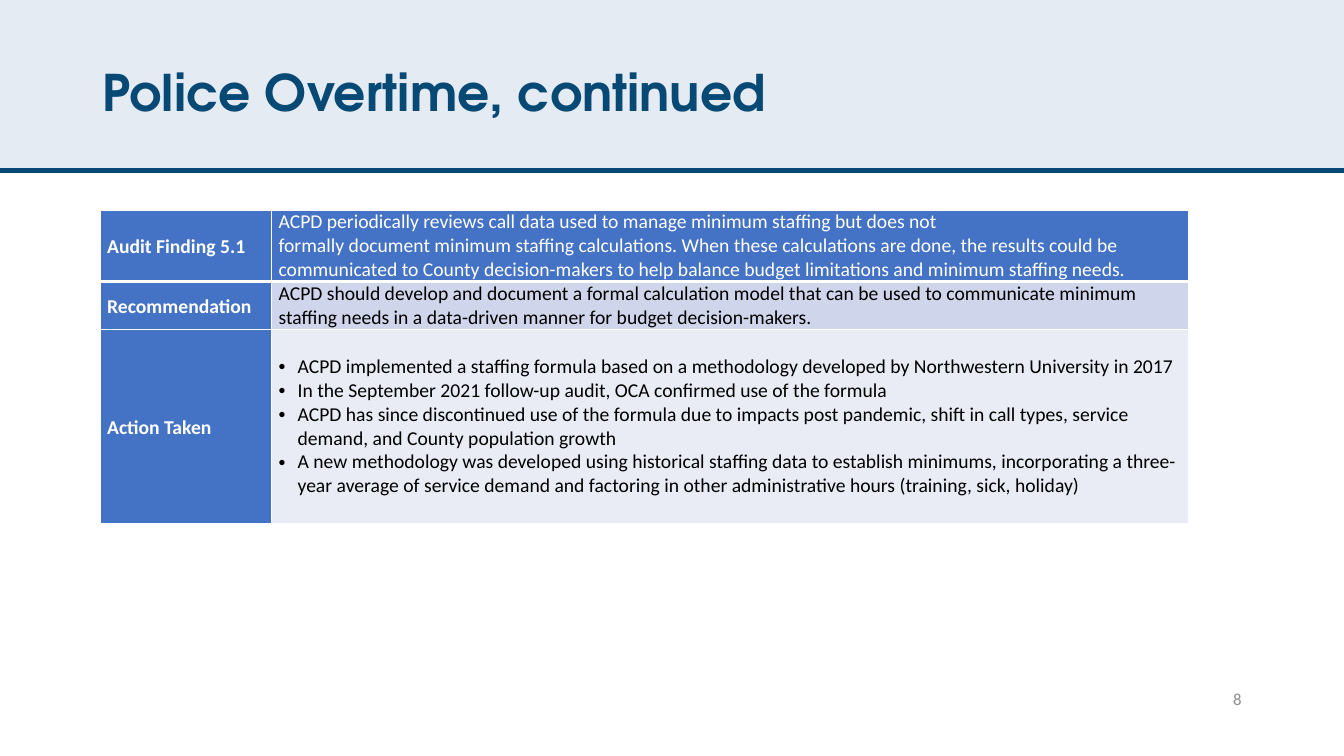
from lxml import etree
from pptx import Presentation
from pptx.dml.color import RGBColor
from pptx.enum.shapes import MSO_CONNECTOR as Connector, MSO_SHAPE as Shape
from pptx.enum.text import MSO_ANCHOR as Anchor, PP_ALIGN as Align
from pptx.oxml.ns import qn
from pptx.util import Cm, Pt

NAVY = RGBColor(0x07, 0x49, 0x75)
PALE = RGBColor(0xE5, 0xEB, 0xF2)
BLUE = RGBColor(0x44, 0x72, 0xC4)
BAND_DARK = RGBColor(0xCF, 0xD5, 0xEA)
BAND_LIGHT = RGBColor(0xE9, 0xEB, 0xF5)
GRAY = RGBColor(0x8C, 0x8C, 0x8C)
WHITE = RGBColor(0xFF, 0xFF, 0xFF)
BLACK = RGBColor(0, 0, 0)

SLIDE_WIDTH, SLIDE_HEIGHT = Cm(33.87), Cm(19.05)

FINDINGS = [
    ("Audit Finding 5.1", [
        "ACPD periodically reviews call data used to manage minimum staffing but does not",
        "formally document minimum staffing calculations. When these calculations are done, "
        "the results could be communicated to County decision-makers to help balance budget "
        "limitations and minimum staffing needs.",
    ], False, BLUE, WHITE, Cm(1.78)),
    ("Recommendation", [
        "ACPD should develop and document a formal calculation model that can be used to "
        "communicate minimum staffing needs in a data-driven manner for budget decision-makers.",
    ], False, BAND_DARK, BLACK, Cm(1.2)),
    ("Action Taken", [
        "ACPD implemented a staffing formula based on a methodology developed by "
        "Northwestern University in 2017",
        "In the September 2021 follow-up audit, OCA confirmed use of the formula",
        "ACPD has since discontinued use of the formula due to impacts post pandemic, "
        "shift in call types, service demand, and County population growth",
        "A new methodology was developed using historical staffing data to establish minimums, "
        "incorporating a three-year average of service demand and factoring in other "
        "administrative hours (training, sick, holiday)",
    ], True, BAND_LIGHT, BLACK, Cm(4.9)),
]


def style_font(font, name, size, color, bold=False):
    font.name, font.size, font.bold = name, Pt(size), bold
    font.color.rgb = color


def add_header(slide, left, top, width, height):
    title = slide.shapes.title
    band = slide.shapes.add_shape(Shape.RECTANGLE, left, top, width, height)
    band.shadow.inherit = False
    band.fill.solid()
    band.fill.fore_color.rgb = PALE
    band.line.fill.background()
    rule = slide.shapes.add_connector(
        Connector.STRAIGHT, left, top + height, left + width, top + height)
    rule.line.color.rgb = NAVY
    rule.line.width = Pt(3.5)
    etree.SubElement(rule.element.spPr, qn("a:effectLst"))
    for backdrop in (band, rule):
        title.element.addprevious(backdrop.element)

    title.left, title.top = left + Cm(2.33), top + Cm(1.01)
    title.width, title.height = width - 2 * Cm(2.33), Cm(2.8)
    frame = title.text_frame
    frame.text = "Police Overtime, continued"
    frame.vertical_anchor = Anchor.MIDDLE
    heading = frame.paragraphs[0]
    heading.alignment = Align.LEFT
    heading.line_spacing = 0.9
    style_font(heading.runs[0].font, "TeX Gyre Adventor", 36, NAVY, True)


def add_borders(cell, bottom_width):
    properties = cell._tc.get_or_add_tcPr()
    for side, width in (("L", 1), ("R", 1), ("T", 1), ("B", bottom_width)):
        border = etree.SubElement(properties, qn(f"a:ln{side}"), w=str(Pt(width)))
        fill = etree.SubElement(border, qn("a:solidFill"))
        etree.SubElement(fill, qn("a:srgbClr"), val=str(WHITE))


def add_bullet(paragraph):
    indent = Cm(0.48)
    properties = paragraph._p.get_or_add_pPr()
    properties.set("marL", str(indent))
    properties.set("indent", str(-indent))
    etree.SubElement(properties, qn("a:buFont"), typeface="Arial")
    etree.SubElement(properties, qn("a:buChar"), char="•")


def fill_cell(cell, lines, fill, color, bottom_width, bold=False, bulleted=False, spacing=1.0):
    add_borders(cell, bottom_width)
    cell.fill.solid()
    cell.fill.fore_color.rgb = fill
    cell.margin_left = cell.margin_right = Cm(0.18)
    cell.margin_top = cell.margin_bottom = 0
    cell.vertical_anchor = Anchor.MIDDLE
    cell.text_frame.text = "\n".join(lines)
    for paragraph in cell.text_frame.paragraphs:
        paragraph.line_spacing = spacing
        if bulleted:
            add_bullet(paragraph)
        style_font(paragraph.runs[0].font, "Calibri", 14, color, bold)


def add_findings(slide, left, top, width):
    height = sum(row[-1] for row in FINDINGS)
    table = slide.shapes.add_table(len(FINDINGS), 2, left, top, width, height).table
    label_width = Cm(4.32)
    table.columns[0].width = label_width
    table.columns[1].width = width - label_width
    for index, (label, lines, bulleted, fill, color, row_height) in enumerate(FINDINGS):
        table.rows[index].height = row_height
        bottom_width = 3 if index == 0 else 1
        fill_cell(table.cell(index, 0), [label], BLUE, WHITE, bottom_width,
                  bold=True, spacing=1.1)
        fill_cell(table.cell(index, 1), lines, fill, color, bottom_width, bulleted=bulleted)


def add_page_number(slide, left, top, width, height):
    frame = slide.shapes.add_textbox(left, top, width, height).text_frame
    frame.word_wrap = True
    frame.vertical_anchor = Anchor.MIDDLE
    frame.text = "8"
    number = frame.paragraphs[0]
    number.alignment = Align.RIGHT
    style_font(number.runs[0].font, "Calibri", 12, GRAY)


def main():
    deck = Presentation()
    deck.slide_width, deck.slide_height = SLIDE_WIDTH, SLIDE_HEIGHT
    slide = deck.slides.add_slide(deck.slide_layouts[5])
    add_header(slide, 0, 0, SLIDE_WIDTH, Cm(4.3))
    add_findings(slide, Cm(2.52), Cm(5.29), Cm(27.43))
    add_page_number(slide, Cm(23.92), Cm(17.1), Cm(7.62), Cm(1.01))
    deck.save("out.pptx")


if __name__ == "__main__":
    main()
